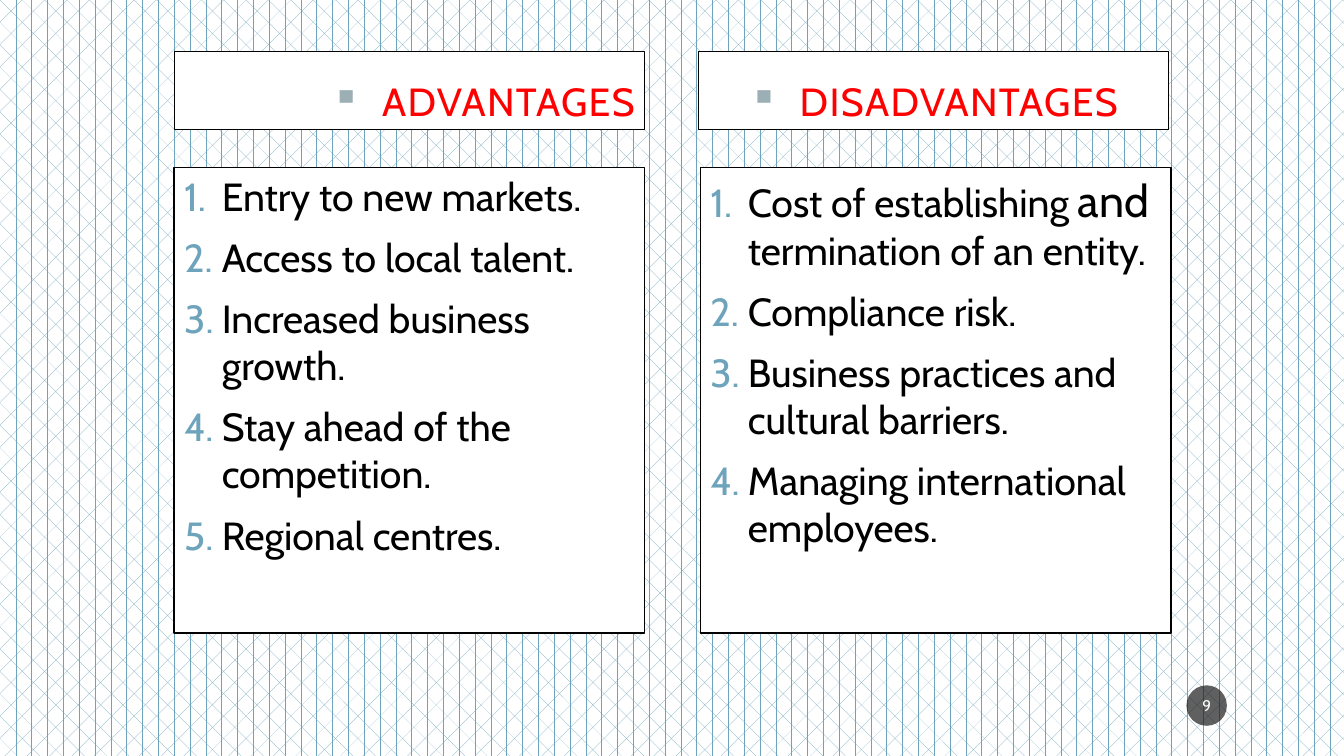
from dataclasses import dataclass

import lxml.etree
import pptx
import pptx.dml.color
import pptx.enum.dml
import pptx.enum.shapes
import pptx.enum.text
import pptx.oxml
import pptx.oxml.ns
import pptx.util
from pptx.dml.color import RGBColor
from pptx.util import Cm

FONT = "Cabin"
WHITE = RGBColor(0xFF, 0xFF, 0xFF)
BLACK = RGBColor(0x00, 0x00, 0x00)
RED = RGBColor(0xFF, 0x00, 0x00)
BLUE = RGBColor(0x6D, 0xA3, 0xBB)
GRAY = RGBColor(0x9B, 0xAF, 0xB5)
CHARCOAL = RGBColor(0x1D, 0x1D, 0x1D)

ALIGN = pptx.enum.text.PP_ALIGN
ANCHOR = pptx.enum.text.MSO_ANCHOR
SHAPE = pptx.enum.shapes.MSO_SHAPE

PANEL_WIDTH = Cm(11.86)
HEADING_TOP, HEADING_HEIGHT = Cm(1.3), Cm(1.96)
LIST_TOP, LIST_HEIGHT = Cm(4.22), Cm(11.73)


@dataclass(frozen=True)
class TextRun:
    text: str
    size: float = 28


@dataclass(frozen=True)
class Column:
    heading: str
    alignment: ALIGN
    heading_left: Cm
    list_left: Cm
    items: tuple[tuple[TextRun, ...], ...]


COLUMNS = (
    Column("ADVANTAGES", ALIGN.RIGHT, Cm(4.39), Cm(4.39), (
        (TextRun("Entry to new markets."),),
        (TextRun("Access to local talent."),),
        (TextRun("Increased business growth."),),
        (TextRun("Stay ahead of the competition."),),
        (TextRun("Regional centres."),),
    )),
    Column("DISADVANTAGES", ALIGN.CENTER, Cm(17.6), Cm(17.65), (
        (TextRun("Cost of establishing "), TextRun("and", 32),
         TextRun(" termination of an entity.")),
        (TextRun("Compliance risk."),),
        (TextRun("Business practices and cultural barriers."),),
        (TextRun("Managing international employees."),),
    )),
)


def add_child(parent, tag: str, **attributes: str):
    child = lxml.etree.SubElement(parent, pptx.oxml.ns.qn(tag))
    for name, value in attributes.items():
        child.set(name, value)
    return child


def add_panel(slide, kind: SHAPE, left: Cm, top: Cm, width: Cm, height: Cm,
              fill: RGBColor, anchor: ANCHOR):
    shape = slide.shapes.add_shape(kind, left, top, width, height)
    shape.shadow.inherit = False
    shape.fill.solid()
    shape.fill.fore_color.rgb = fill
    shape.text_frame.word_wrap = True
    shape.text_frame.vertical_anchor = anchor
    return shape


def outline(shape, width: float) -> None:
    shape.line.color.rgb = BLACK
    shape.line.width = pptx.util.Pt(width)


def add_run(paragraph, text_run: TextRun, color: RGBColor):
    run = paragraph.add_run()
    run.text = text_run.text
    run.font.name = FONT
    run.font.size = pptx.util.Pt(text_run.size)
    run.font.color.rgb = color
    return run


def set_bullet(paragraph, indent: Cm, color: RGBColor, tag: str, **attributes: str) -> None:
    paragraph.space_before = pptx.util.Pt(10)
    properties = paragraph._p.get_or_add_pPr()
    properties.set("marL", str(indent))
    properties.set("indent", str(-indent))
    bullet_color = add_child(properties, "a:buClr")
    add_child(bullet_color, "a:srgbClr", val=str(color))
    add_child(properties, tag, **attributes)


def add_heading(slide, column: Column) -> None:
    shape = add_panel(slide, SHAPE.RECTANGLE, column.heading_left, HEADING_TOP,
                      PANEL_WIDTH, HEADING_HEIGHT, WHITE, ANCHOR.BOTTOM)
    outline(shape, 0.75)
    paragraph = shape.text_frame.paragraphs[0]
    paragraph.alignment = column.alignment
    set_bullet(paragraph, Cm(1.27), GRAY, "a:buChar", char="▪")
    run = add_run(paragraph, TextRun(column.heading), RED)
    run._r.get_or_add_rPr().set("spc", "100")


def add_list(slide, column: Column) -> None:
    shape = add_panel(slide, SHAPE.RECTANGLE, column.list_left, LIST_TOP,
                      PANEL_WIDTH, LIST_HEIGHT, WHITE, ANCHOR.TOP)
    outline(shape, 1)
    frame = shape.text_frame
    for index, item in enumerate(column.items):
        paragraph = frame.add_paragraph() if index else frame.paragraphs[0]
        paragraph.alignment = ALIGN.LEFT
        set_bullet(paragraph, Cm(0.95), BLUE, "a:buAutoNum", type="arabicPeriod")
        for text_run in item:
            add_run(paragraph, text_run, BLACK)


def add_page_number(slide, number: str) -> None:
    shape = add_panel(slide, SHAPE.OVAL, Cm(29.9), Cm(17.27), Cm(1.02), Cm(1.02),
                      CHARCOAL, ANCHOR.MIDDLE)
    shape.line.fill.background()
    fill_color = shape._element.spPr.find(".//" + pptx.oxml.ns.qn("a:srgbClr"))
    add_child(fill_color, "a:alpha", val="70000")
    frame = shape.text_frame
    frame.margin_left = frame.margin_right = Cm(0.05)
    frame.margin_top = frame.margin_bottom = Cm(0.13)
    paragraph = frame.paragraphs[0]
    paragraph.alignment = ALIGN.CENTER
    add_run(paragraph, TextRun(number, 11), WHITE)


def main() -> None:
    presentation = pptx.Presentation()
    presentation.slide_width = Cm(33.87)
    presentation.slide_height = Cm(19.05)
    slide = presentation.slides.add_slide(presentation.slide_layouts[6])
    background = slide.background.fill
    background.patterned()
    background.pattern = pptx.enum.dml.MSO_PATTERN.DIVOT
    background.fore_color.rgb = BLUE
    background.back_color.rgb = WHITE
    for column in COLUMNS:
        add_heading(slide, column)
        add_list(slide, column)
    add_page_number(slide, "9")
    presentation.save("out.pptx")


if __name__ == "__main__":
    main()
